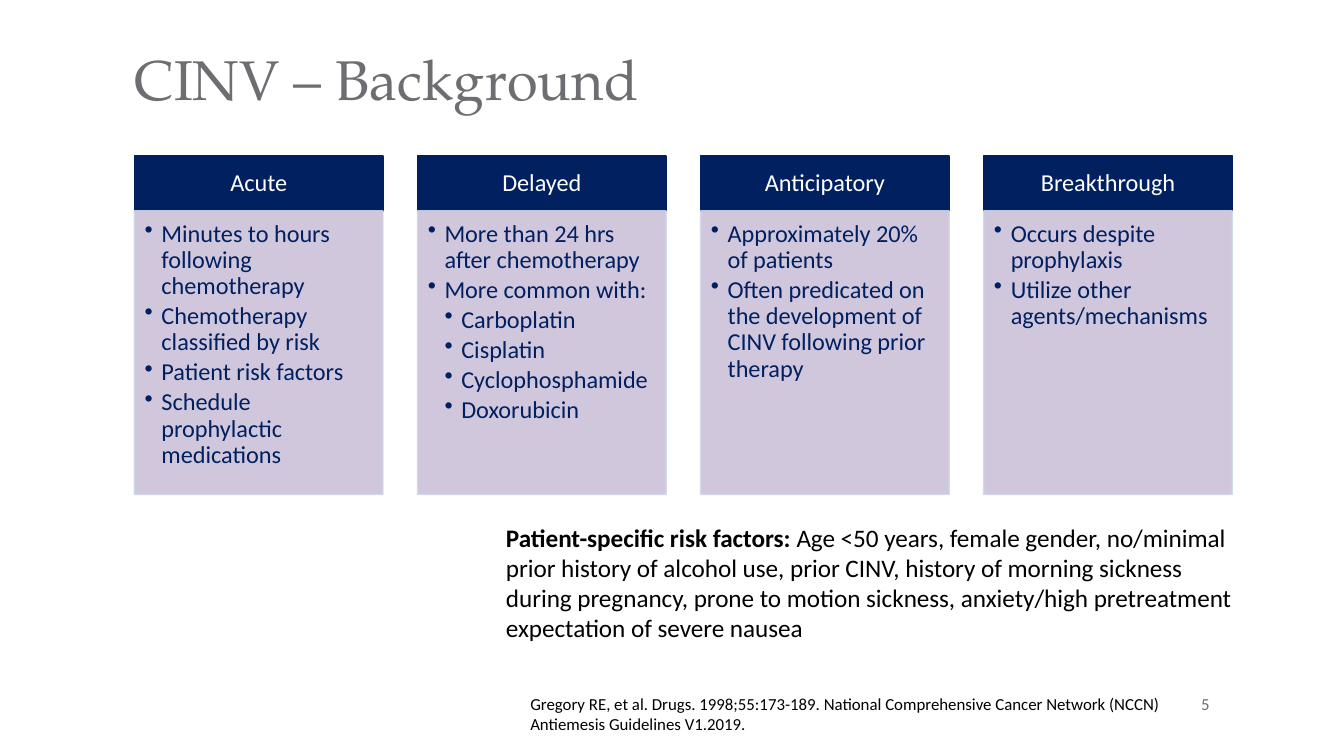
import pptx
import pptx.util
import pptx.dml.color
import pptx.enum.shapes
import pptx.enum.text
import pptx.oxml.ns
import lxml.etree

Pt = pptx.util.Pt
ALIGN = pptx.enum.text.PP_ALIGN
ANCHOR = pptx.enum.text.MSO_ANCHOR
COLORS = {"navy": "002060", "lilac": "CCC1DA", "edge": "D0D8E8",
          "white": "FFFFFF", "gray": "6D6E71", "black": "000000"}
COLUMNS = [
    ("Acute", [(0, "Minutes to hours following chemotherapy"),
               (0, "Chemotherapy classified by risk"),
               (0, "Patient risk factors"),
               (0, "Schedule prophylactic medications")]),
    ("Delayed", [(0, "More than 24 hrs after chemotherapy"),
                 (0, "More common with:"),
                 (1, "Carboplatin"), (1, "Cisplatin"),
                 (1, "Cyclophosphamide"), (1, "Doxorubicin")]),
    ("Anticipatory", [(0, "Approximately 20% of patients"),
                      (0, "Often predicated on the development of CINV following prior therapy")]),
    ("Breakthrough", [(0, "Occurs despite prophylaxis"),
                      (0, "Utilize other agents/mechanisms")]),
]
COLUMN_WIDTH = 133.2
COLUMN_PITCH = 151.65
HEADER_HEIGHT = 29.5
BULLET_INDENT = 9


def rgb(name):
    return pptx.dml.color.RGBColor.from_string(COLORS[name])


def add_xml(parent, tag, **attributes):
    return lxml.etree.SubElement(parent, pptx.oxml.ns.qn(tag), attributes)


def write(para, text, size=13, color="black", font="Calibri", bold=False):
    span = para.add_run()
    span.text = text
    span.font.size = Pt(size)
    span.font.name = font
    span.font.bold = bold
    span.font.color.rgb = rgb(color)


def set_frame(frame, insets, anchor=ANCHOR.TOP):
    frame.word_wrap = True
    frame.vertical_anchor = anchor
    frame.margin_left, frame.margin_top, frame.margin_right, frame.margin_bottom = map(Pt, insets)


def add_text(page, box, spans, insets=(7.2, 3.6, 7.2, 3.6), anchor=ANCHOR.TOP, align=ALIGN.LEFT):
    frame = page.shapes.add_textbox(*map(Pt, box)).text_frame
    set_frame(frame, insets, anchor)
    para = frame.paragraphs[0]
    para.alignment = align
    for text, style in spans:
        write(para, text, **style)


def add_panel(page, box, fill, line, insets, anchor, alpha=None):
    panel = page.shapes.add_shape(pptx.enum.shapes.MSO_SHAPE.RECTANGLE, *map(Pt, box))
    panel.shadow.inherit = False
    panel.fill.solid()
    panel.fill.fore_color.rgb = rgb(fill)
    panel.line.color.rgb = rgb(line)
    panel.line.width = Pt(0.75)
    if alpha:
        for color in panel._element.spPr.iter(pptx.oxml.ns.qn("a:srgbClr")):
            add_xml(color, "a:alpha", val=str(alpha * 1000))
    set_frame(panel.text_frame, insets, anchor)
    return panel.text_frame


def add_bullet(para, level, text):
    para.level = level
    para.alignment = ALIGN.LEFT
    para.line_spacing = 0.9
    para.space_after = Pt(2)
    properties = para._p.get_or_add_pPr()
    properties.set("marL", str(Pt(BULLET_INDENT * (level + 1))))
    properties.set("indent", str(-Pt(BULLET_INDENT)))
    add_xml(properties, "a:buChar", char="•")
    write(para, text, color="navy")


def add_column(page, box, heading, items):
    left, top, width, height = box
    header = add_panel(page, (left, top, width, HEADER_HEIGHT), "navy", "navy",
                       (7.2, 4.3, 7.2, 4.3), ANCHOR.MIDDLE)
    para = header.paragraphs[0]
    para.alignment = ALIGN.CENTER
    para.line_spacing = 0.9
    write(para, heading, color="white")

    body = add_panel(page, (left, top + HEADER_HEIGHT, width, height - HEADER_HEIGHT),
                     "lilac", "edge", (5.5, 5.5, 7.2, 8), ANCHOR.TOP, alpha=90)
    for index, (level, text) in enumerate(items):
        para = body.add_paragraph() if index else body.paragraphs[0]
        add_bullet(para, level, text)


def add_columns(page, box):
    left, top, width, height = box
    for index, (heading, items) in enumerate(COLUMNS):
        add_column(page, (left + index * COLUMN_PITCH, top, COLUMN_WIDTH, height), heading, items)


def add_title(page, box):
    style = {"size": 30, "color": "gray", "font": "TeX Gyre Pagella"}
    add_text(page, box, [("CINV – Background", style)], insets=(0, 0, 0, 0))


def add_risk_factors(page, box):
    add_text(page, box, [
        ("Patient-specific risk factors: ", {"size": 13.5, "bold": True}),
        ("Age <50 years, female gender, no/minimal prior history of alcohol use, prior CINV, "
         "history of morning sickness during pregnancy, prone to motion sickness, "
         "anxiety/high pretreatment expectation of severe nausea", {"size": 13.5})])


def add_footer(page, box):
    left, top, width, height = box
    add_text(page, (left + 203, top, 168, 21.6), [("5", {"size": 9, "color": "gray"})],
             insets=(0, 0, 0, 0), anchor=ANCHOR.BOTTOM, align=ALIGN.RIGHT)
    add_text(page, (left, top + 7.2, width, height - 7.2), [
        ("Gregory RE, et al. Drugs. 1998;55:173-189. National Comprehensive Cancer Network (NCCN) "
         "Antiemesis Guidelines V1.2019.", {"size": 9})])


def main():
    deck = pptx.Presentation()
    deck.slide_width = Pt(720)
    deck.slide_height = Pt(405)
    page = deck.slides.add_slide(deck.slide_layouts[6])
    add_title(page, (72, 24, 576, 36))
    add_columns(page, (72, 83.5, 588, 181.5))
    add_risk_factors(page, (264, 276, 410, 73))
    add_footer(page, (277, 360.8, 382.3, 36))
    deck.save("out.pptx")


if __name__ == "__main__":
    main()
